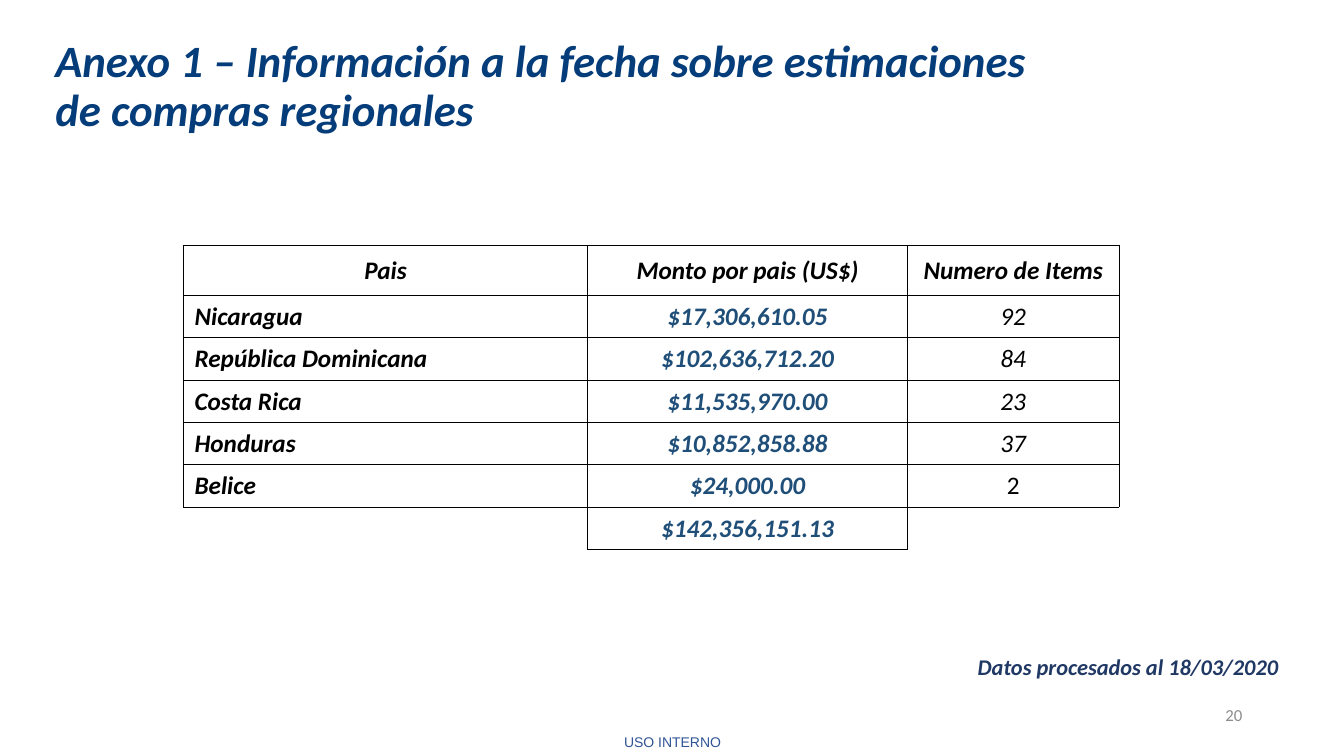
from dataclasses import dataclass

from lxml.etree import SubElement
from pptx import Presentation
from pptx.dml.color import RGBColor
from pptx.enum.text import MSO_ANCHOR, PP_ALIGN
from pptx.oxml.ns import qn
from pptx.util import Inches, Pt

COLORS = {
    "title": "053D7A",
    "footer": "305496",
    "date": "203864",
    "amount": "1F4E78",
    "black": "000000",
    "page": "8C8C8C",
}


@dataclass(frozen=True)
class Label:
    text: str
    left: float
    top: float
    width: float
    height: float
    size: float
    color: str
    font: str = "Calibri"
    strong: bool = False
    align: PP_ALIGN = PP_ALIGN.LEFT
    anchor: MSO_ANCHOR = MSO_ANCHOR.TOP
    line_spacing: float = 1.0


@dataclass(frozen=True)
class CountryRow:
    country: str
    amount: str
    items: str


LABELS = [
    Label("Anexo 1 – Información a la fecha sobre estimaciones de compras regionales",
          0.45, 0.34, 9.9, 0.97, 32, "title", strong=True, line_spacing=0.9),
    Label("USO INTERNO", 0.14, 7.23, 13.06, 0.27, 10, "footer", font="Arial",
          align=PP_ALIGN.CENTER),
    Label("Datos procesados al 18/03/2020", 7.51, 6.43, 5.27, 0.37, 16, "date",
          strong=True, align=PP_ALIGN.RIGHT),
    Label("20", 9.42, 6.89, 3, 0.4, 12, "page", align=PP_ALIGN.RIGHT,
          anchor=MSO_ANCHOR.MIDDLE),
]

HEADER = CountryRow("Pais", "Monto por pais (US$)", "Numero de Items")
COUNTRIES = [
    CountryRow("Nicaragua", "$17,306,610.05", "92"),
    CountryRow("República Dominicana", "$102,636,712.20", "84"),
    CountryRow("Costa Rica", "$11,535,970.00", "23"),
    CountryRow("Honduras", "$10,852,858.88", "37"),
    CountryRow("Belice", "$24,000.00", "2"),
]
TOTAL = CountryRow("", "$142,356,151.13", "")
COLUMN_WIDTHS = [4.01, 3.17, 2.1]
HEADER_HEIGHT = 0.5
ROW_HEIGHT = 0.42


def write_text(text_frame, text: str, *, size: float, color: str,
               font: str = "Calibri", bold: bool = False, italic: bool = False,
               align: PP_ALIGN = PP_ALIGN.LEFT, line_spacing: float = 1.0,
               indent: float = 0) -> None:
    paragraph = text_frame.paragraphs[0]
    paragraph.alignment = align
    paragraph.line_spacing = line_spacing
    if indent:
        properties = paragraph._p.get_or_add_pPr()
        properties.set("marL", "0")
        properties.set("indent", str(Inches(indent)))
    run = paragraph.add_run()
    run.text = text
    run.font.name = font
    run.font.size = Pt(size)
    run.font.bold = bold
    run.font.italic = italic
    run.font.color.rgb = RGBColor.from_string(COLORS[color])


def add_label(slide, label: Label) -> None:
    shape = slide.shapes.add_textbox(Inches(label.left), Inches(label.top),
                                     Inches(label.width), Inches(label.height))
    shape.text_frame.word_wrap = True
    shape.text_frame.vertical_anchor = label.anchor
    write_text(shape.text_frame, label.text, size=label.size, color=label.color,
               font=label.font, bold=label.strong, italic=label.strong,
               align=label.align, line_spacing=label.line_spacing)


def set_borders(cell, hidden_sides: str) -> None:
    properties = cell._tc.get_or_add_tcPr()
    for side in "LRTB":
        line = SubElement(properties, qn(f"a:ln{side}"), w=str(Pt(0.5)))
        if side in hidden_sides:
            SubElement(line, qn("a:noFill"))
        else:
            fill = SubElement(line, qn("a:solidFill"))
            SubElement(fill, qn("a:srgbClr"), val=COLORS["black"])


def format_cell(cell, text: str, row: int, column: int) -> None:
    cell.margin_left = cell.margin_right = cell.margin_top = Inches(0.01)
    cell.margin_bottom = 0
    cell.vertical_anchor = MSO_ANCHOR.MIDDLE
    outer_sides = "LB" if column == 0 else "RB"
    set_borders(cell, "" if text else outer_sides)
    cell.fill.background()
    if not text:
        return
    is_header = row == 0
    is_country = column == 0 and not is_header
    is_amount = column == 1 and not is_header
    write_text(cell.text_frame, text, size=18,
               color="amount" if is_amount else "black",
               bold=is_header or column < 2,
               italic=text != COUNTRIES[-1].items,
               align=PP_ALIGN.LEFT if is_country else PP_ALIGN.CENTER,
               indent=0.1 if is_country else 0)


def add_purchase_table(slide) -> None:
    rows = [HEADER, *COUNTRIES, TOTAL]
    height = HEADER_HEIGHT + ROW_HEIGHT * (len(rows) - 1)
    table = slide.shapes.add_table(len(rows), len(COLUMN_WIDTHS), Inches(1.82),
                                   Inches(2.43), Inches(sum(COLUMN_WIDTHS)),
                                   Inches(height)).table
    table.first_row = False
    table.horz_banding = False
    for column, width in zip(table.columns, COLUMN_WIDTHS):
        column.width = Inches(width)
    for row_index, record in enumerate(rows):
        table.rows[row_index].height = Inches(ROW_HEIGHT if row_index else HEADER_HEIGHT)
        for column_index, text in enumerate((record.country, record.amount, record.items)):
            format_cell(table.cell(row_index, column_index), text, row_index, column_index)


def main() -> None:
    presentation = Presentation()
    presentation.slide_width = Inches(13.33)
    presentation.slide_height = Inches(7.5)
    slide = presentation.slides.add_slide(presentation.slide_layouts[6])
    for label in LABELS:
        add_label(slide, label)
    add_purchase_table(slide)
    presentation.save("out.pptx")


if __name__ == "__main__":
    main()
